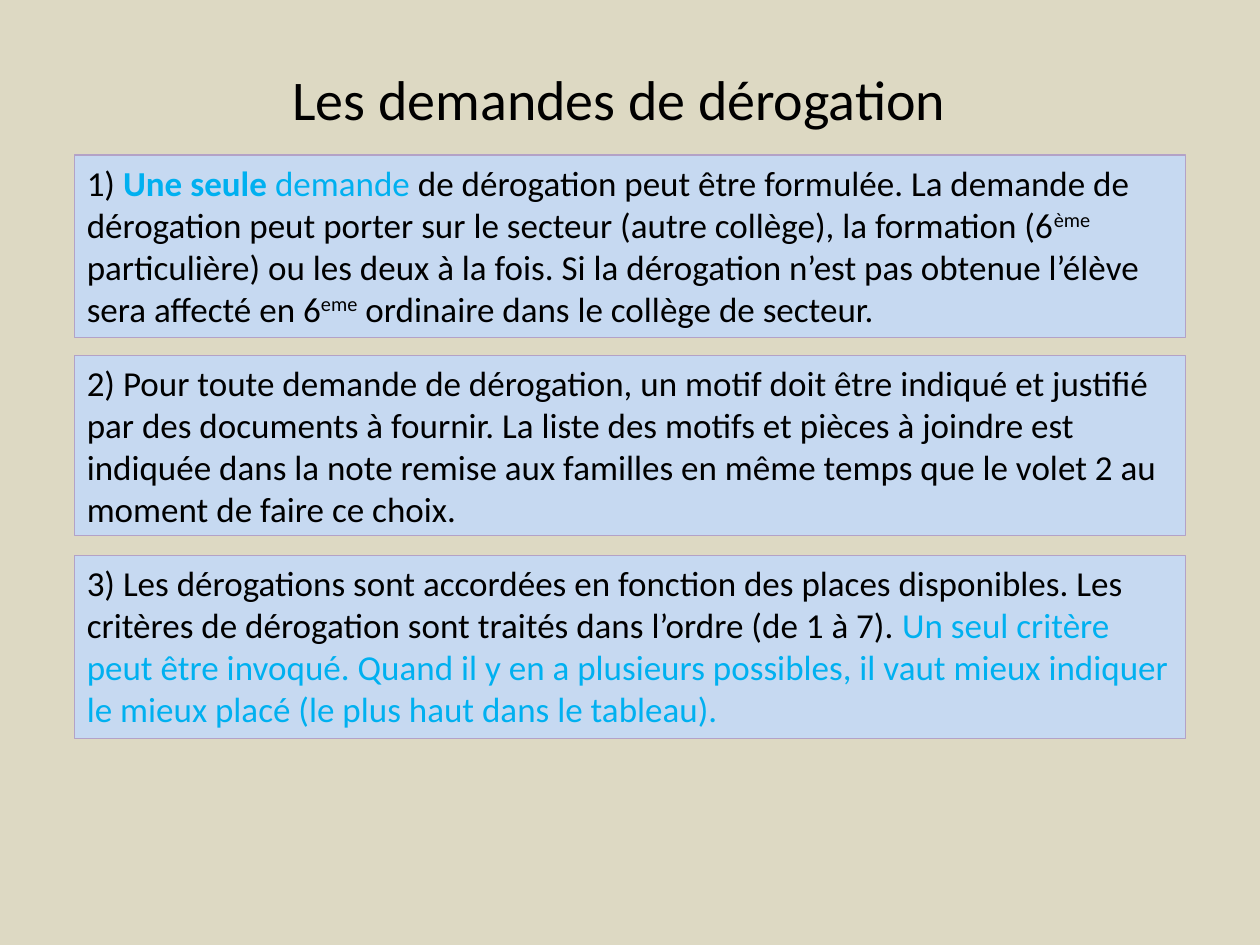
import pptx
import pptx.util
import pptx.dml.color
import pptx.enum.shapes
import pptx.enum.text

Pt = pptx.util.Pt

COLORS = {
    "background": "DDD9C3",
    "panel": "C6D9F1",
    "border": "B3A2C7",
    "text": "000000",
    "accent": "00B0F0",
}
FORMATS = {
    "title": {"size": Pt(32), "bold": False},
    "plain": {"size": Pt(20), "bold": False},
    "strong": {"size": Pt(20), "bold": True},
}
SUPERSCRIPT = "30000"

TITLE = [("Les demandes de dérogation", "title", "text", False)]
RULES = [
    [
        ("1) ", "plain", "text", False),
        ("Une seule ", "strong", "accent", False),
        ("demande ", "plain", "accent", False),
        ("de dérogation peut être formulée. La demande de dérogation peut porter "
         "sur le secteur (autre collège), la formation (6", "plain", "text", False),
        ("ème", "plain", "text", True),
        (" particulière) ou les deux à la fois. Si la dérogation n’est pas obtenue "
         "l’élève sera affecté en 6", "plain", "text", False),
        ("eme", "plain", "text", True),
        (" ordinaire dans le collège de secteur.", "plain", "text", False),
    ],
    [
        ("2) Pour toute demande de dérogation, un motif doit être indiqué et justifié "
         "par des documents à fournir. La liste des motifs et pièces à joindre est "
         "indiquée dans la note remise aux familles en même temps que le volet 2 au "
         "moment de faire ce choix.", "plain", "text", False),
    ],
    [
        ("3) Les dérogations sont accordées en fonction des places disponibles. Les "
         "critères de dérogation sont traités dans l’ordre (de 1 à 7). ",
         "plain", "text", False),
        ("Un seul critère peut être invoqué. Quand il y en a plusieurs possibles, il "
         "vaut mieux indiquer le mieux placé (le plus haut dans le tableau).",
         "plain", "accent", False),
    ],
]
RULE_HEIGHTS = [104.4, 103, 104.4]
RULE_LEFT, RULE_TOP, RULE_WIDTH, RULE_STEP = 42.5, 88.5, 635, 114.5


def color(name):
    return pptx.dml.color.RGBColor.from_string(COLORS[name])


def paint(fill, name):
    fill.solid()
    fill.fore_color.rgb = color(name)


def write(frame, pieces, align):
    frame.word_wrap = True
    frame.vertical_anchor = pptx.enum.text.MSO_ANCHOR.TOP
    paragraph = frame.paragraphs[0]
    paragraph.alignment = align
    for words, style, ink, raised in pieces:
        run = paragraph.add_run()
        run.text = words
        run.font.name = "Calibri"
        run.font.color.rgb = color(ink)
        for attribute, value in FORMATS[style].items():
            setattr(run.font, attribute, value)
        if raised:
            run._r.get_or_add_rPr().set("baseline", SUPERSCRIPT)
    return paragraph


def main():
    deck = pptx.Presentation()
    deck.slide_width, deck.slide_height = Pt(720), Pt(540)
    slide = deck.slides.add_slide(deck.slide_layouts[6])
    paint(slide.background.fill, "background")

    heading = slide.shapes.add_textbox(Pt(133.2), Pt(31.7), Pt(441.4), Pt(45.4))
    line = write(heading.text_frame, TITLE, pptx.enum.text.PP_ALIGN.CENTER)
    line.line_spacing = 1.05

    for index, (rule, height) in enumerate(zip(RULES, RULE_HEIGHTS)):
        panel = slide.shapes.add_shape(
            pptx.enum.shapes.MSO_SHAPE.RECTANGLE,
            Pt(RULE_LEFT), Pt(RULE_TOP + index * RULE_STEP),
            Pt(RULE_WIDTH), Pt(height))
        panel.shadow.inherit = False
        paint(panel.fill, "panel")
        paint(panel.line.fill, "border")
        panel.line.width = Pt(0.75)
        write(panel.text_frame, rule, pptx.enum.text.PP_ALIGN.LEFT)
        panel.text_frame.auto_size = pptx.enum.text.MSO_AUTO_SIZE.SHAPE_TO_FIT_TEXT

    deck.save("out.pptx")


if __name__ == "__main__":
    main()
